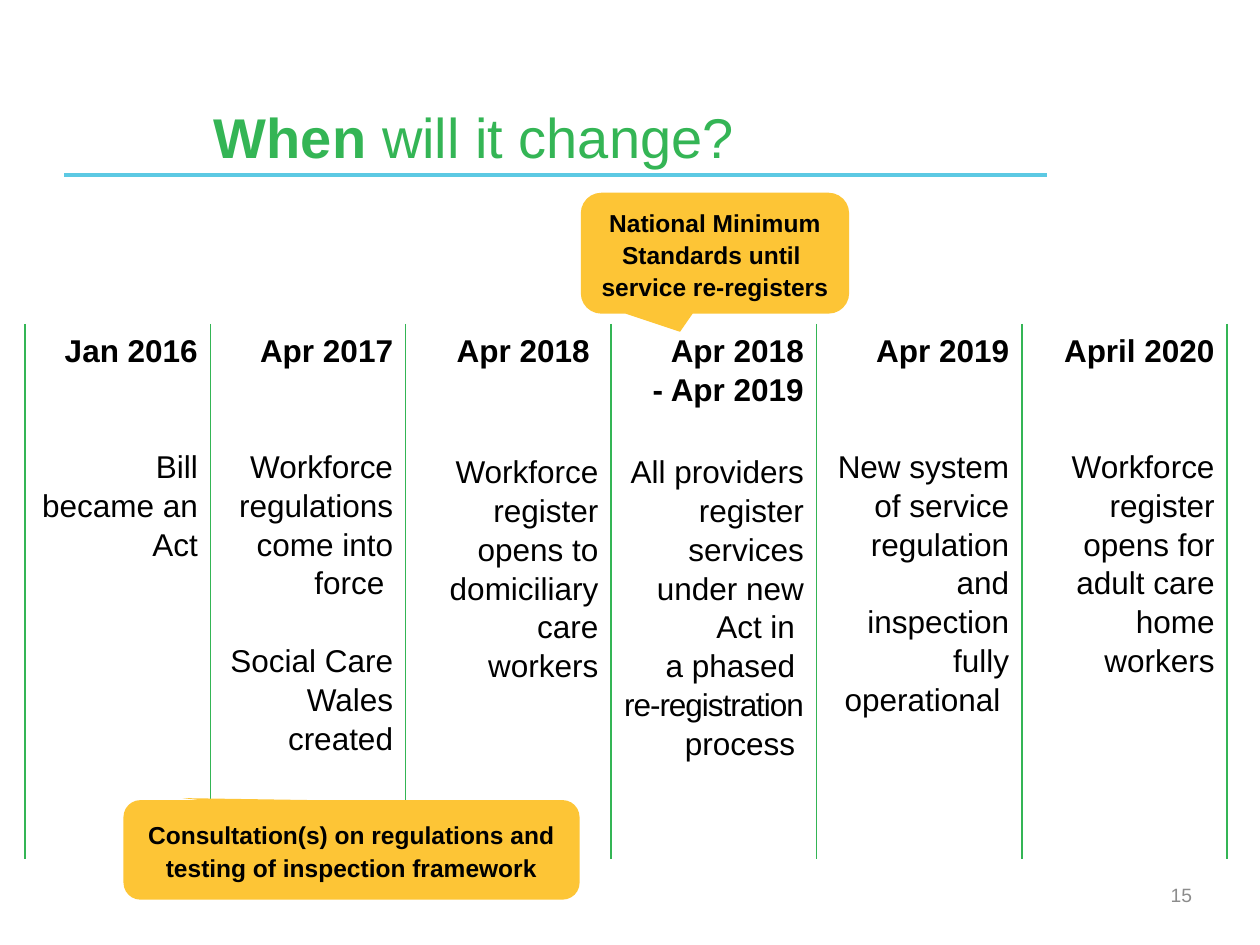
from dataclasses import dataclass

from lxml.etree import SubElement
from pptx import Presentation
from pptx.dml.color import RGBColor
from pptx.enum.shapes import MSO_CONNECTOR, MSO_SHAPE
from pptx.enum.text import MSO_ANCHOR, PP_ALIGN
from pptx.oxml.ns import qn
from pptx.util import Inches, Pt


@dataclass(frozen=True)
class Theme:
    font: str = "Arial"
    green: str = "34B555"
    cyan: str = "5CC9E3"
    amber: str = "FDC536"
    black: str = "000000"
    grey: str = "8C8C8C"
    title_size: int = 32
    table_size: int = 18
    callout_size: int = 14
    number_size: int = 11
    line_spacing: float = 1.1
    blank_line: float = 22.15


def write_paragraph(frame, spans, *, font, size, color, first=False,
                    align=PP_ALIGN.LEFT, line_spacing=None, before=0):
    """Add one paragraph; each span is (text, bold) or (text, bold, tracking)."""
    para = frame.paragraphs[0] if first else frame.add_paragraph()
    para.alignment = align
    if line_spacing:
        para.line_spacing = line_spacing
    if before:
        para.space_before = Pt(before)
    for text, bold, *tracking in spans:
        for index, line in enumerate(text.split("\n")):
            if index:
                para.add_line_break()
            if not line:
                continue
            span = para.add_run()
            span.text = line
            span.font.name = font
            span.font.size = Pt(size)
            span.font.bold = bold
            span.font.color.rgb = RGBColor.from_string(color)
            if tracking:
                span.font._element.set("spc", str(round(tracking[0] * 100)))


def set_cell_borders(cell, color, width):
    """Rule the left and right edges and leave the top and bottom open."""
    properties = cell._tc.get_or_add_tcPr()
    for position, edge in enumerate(("lnL", "lnR", "lnT", "lnB")):
        line = SubElement(properties, qn(f"a:{edge}"))
        if edge in ("lnL", "lnR"):
            line.set("w", str(Pt(width)))
            fill = SubElement(line, qn("a:solidFill"))
            SubElement(fill, qn("a:srgbClr")).set("val", color)
        else:
            SubElement(line, qn("a:noFill"))
        properties.remove(line)
        properties.insert(position, line)


class SlideBuilder:
    def __init__(self, slide, theme):
        self.slide = slide
        self.theme = theme

    def text(self, left, top, width, height, spans, *, anchor, **style):
        box = self.slide.shapes.add_textbox(
            Inches(left), Inches(top), Inches(width), Inches(height))
        box.text_frame.word_wrap = True
        box.text_frame.vertical_anchor = anchor
        write_paragraph(box.text_frame, spans, font=self.theme.font, first=True, **style)

    def rule(self, left, right, top, *, color, width):
        line = self.slide.shapes.add_connector(
            MSO_CONNECTOR.STRAIGHT, Inches(left), Inches(top), Inches(right), Inches(top))
        line.line.color.rgb = RGBColor.from_string(color)
        line.line.width = Pt(width)
        SubElement(line._element.spPr, qn("a:effectLst"))

    def callout(self, left, top, width, height, tip, lines):
        shape = self.slide.shapes.add_shape(
            MSO_SHAPE.ROUNDED_RECTANGULAR_CALLOUT,
            Inches(left), Inches(top), Inches(width), Inches(height))
        shape.adjustments[0], shape.adjustments[1] = tip
        shape.adjustments[2] = 0.17
        shape.shadow.inherit = False
        shape.fill.solid()
        shape.fill.fore_color.rgb = RGBColor.from_string(self.theme.amber)
        shape.line.fill.background()
        frame = shape.text_frame
        frame.word_wrap = True
        frame.vertical_anchor = MSO_ANCHOR.MIDDLE
        for index, line in enumerate(lines):
            write_paragraph(frame, [(line, True)], font=self.theme.font,
                            size=self.theme.callout_size, color=self.theme.black,
                            first=index == 0, align=PP_ALIGN.CENTER,
                            line_spacing=self.theme.line_spacing)

    def timeline(self, left, top, height, widths, stages):
        """Draw one column per stage; each paragraph is (spans, space before)."""
        table = self.slide.shapes.add_table(
            1, len(widths), Inches(left), Inches(top),
            Inches(sum(widths)), Inches(height)).table
        table.first_row = False
        table.horz_banding = False
        table.rows[0].height = Inches(height)
        for index, (width, stage) in enumerate(zip(widths, stages)):
            table.columns[index].width = Inches(width)
            cell = table.cell(0, index)
            cell.fill.background()
            set_cell_borders(cell, self.theme.green, 1)
            for number, (spans, before) in enumerate(stage):
                write_paragraph(cell.text_frame, spans, font=self.theme.font,
                                size=self.theme.table_size, color=self.theme.black,
                                first=number == 0, align=PP_ALIGN.RIGHT,
                                line_spacing=self.theme.line_spacing, before=before)


def date(text):
    return [(text, True)], 0


def event(*spans, lines=2, extra=0):
    """An event set a number of blank lines below what precedes it."""
    spans = [(span, False) if isinstance(span, str) else span for span in spans]
    return spans, lines * Theme.blank_line + extra


STAGES = [
    [date("Jan 2016"), event("Bill became an Act")],
    [date("Apr 2017"), event("Workforce regulations come into force "),
     event("Social Care Wales created", lines=1)],
    [date("Apr 2018 "),
     event("Workforce register opens to domiciliary care workers", extra=3)],
    [date("Apr 2018"), date("- Apr 2019"),
     event("All providers register services under new Act in \na phased \n",
           ("re-registration", False, -0.6), " process ", lines=1, extra=3)],
    [date("Apr 2019"),
     event("New system of service regulation and inspection fully operational ")],
    [date("April 2020"), event("Workforce register opens for adult care home workers")],
]


def main():
    theme = Theme()
    deck = Presentation()
    deck.slide_width, deck.slide_height = Inches(10), Inches(7.5)
    page = SlideBuilder(deck.slides.add_slide(deck.slide_layouts[6]), theme)

    page.rule(0.51, 8.31, 1.39, color=theme.cyan, width=2)
    page.text(1.6, 0.31, 7.8, 1.09, [("When ", True), ("will it change?", False)],
              anchor=MSO_ANCHOR.BOTTOM, size=theme.title_size, color=theme.green)
    page.text(7.23, 6.9, 2.33, 0.4, [("15", False)], anchor=MSO_ANCHOR.MIDDLE,
              size=theme.number_size, color=theme.grey, align=PP_ALIGN.RIGHT)
    page.timeline(0.2, 2.57, 4.25, [1.47, 1.55] + [1.63] * 4, STAGES)
    page.callout(4.61, 1.53, 2.13, 0.96, (-0.13, 0.65),
                 ["National Minimum Standards until ", "service re-registers"])
    page.callout(0.98, 6.35, 3.62, 0.79, (-0.37, -0.52),
                 ["Consultation(s) on regulations and testing of inspection framework"])
    deck.save("out.pptx")


if __name__ == "__main__":
    main()
